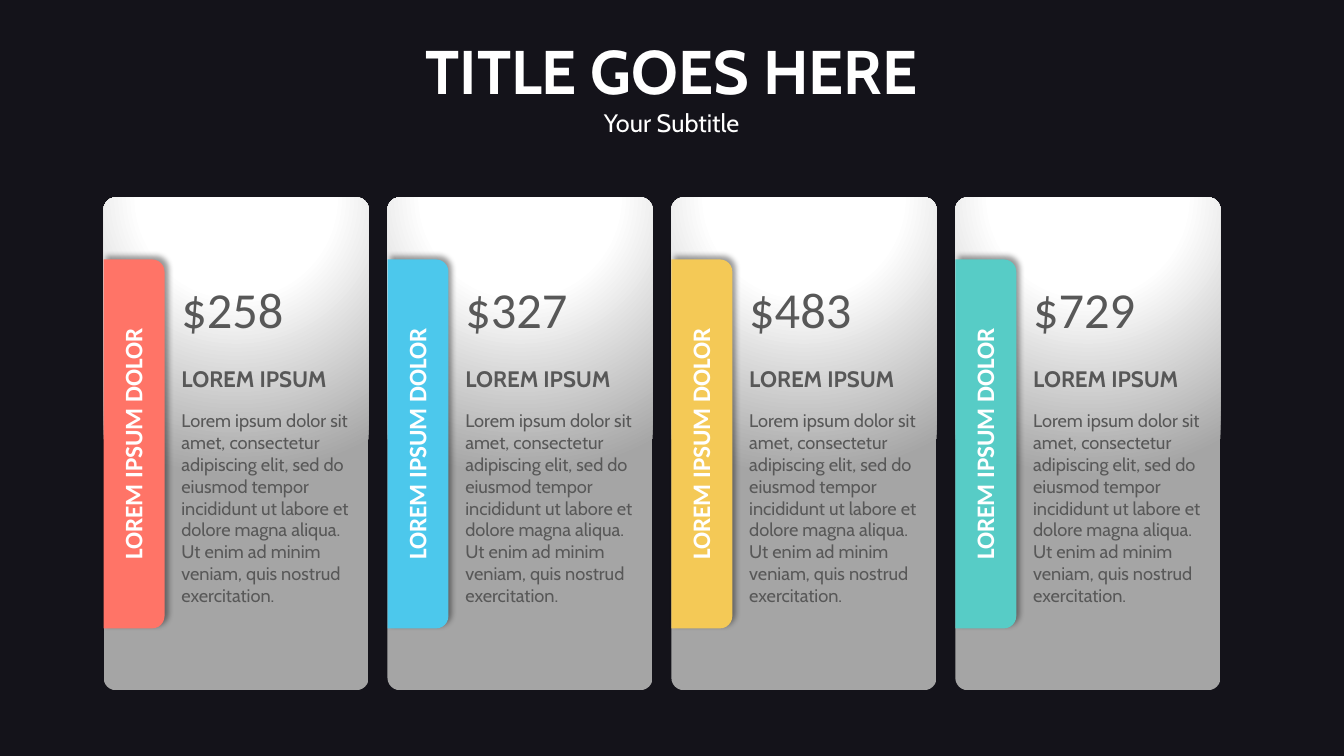
from lxml import etree
from pptx import Presentation
from pptx.dml.color import RGBColor
from pptx.enum import shapes, text
from pptx.oxml import parse_xml
from pptx.oxml.ns import nsdecls
from pptx.util import Pt

NIGHT = RGBColor(0x14, 0x13, 0x1A)
WHITE = RGBColor(0xFF, 0xFF, 0xFF)
GREY = RGBColor(0x58, 0x58, 0x58)
SILVER = RGBColor(0xA5, 0xA5, 0xA5)
BLACK = RGBColor(0, 0, 0)
CORAL = RGBColor(0xFF, 0x74, 0x67)
SKY = RGBColor(0x4C, 0xC8, 0xEC)
AMBER = RGBColor(0xF4, 0xC9, 0x56)
TEAL = RGBColor(0x57, 0xCC, 0xC6)

PLANS = [("$258", CORAL), ("$327", SKY), ("$483", AMBER), ("$729", TEAL)]
TAB_LABEL = "LOREM IPSUM DOLOR"
HEADING = "LOREM IPSUM"
BODY = ("Lorem ipsum dolor sit amet, consectetur adipiscing elit, sed do "
        "eiusmod tempor incididunt ut labore et dolore magna aliqua. "
        "Ut enim ad minim veniam, quis nostrud exercitation.")
RADIUS = 8.8


def add_text(p, words, font, size, color, bold=False, align=None, before=0):
    p.alignment = align
    p.space_before = Pt(before)
    r = p.add_run()
    r.text = words
    r.font.name = font
    r.font.size = Pt(size)
    r.font.bold = bold
    r.font.color.rgb = color


def add_plain_shape(s, kind, x, y, w, h):
    sp = s.shapes.add_shape(kind, Pt(x), Pt(y), Pt(w), Pt(h))
    sp.shadow.inherit = False
    sp.line.fill.background()
    return sp


def set_glow_fill(sp):
    """Fill with a radial gradient centred above the shape."""
    sp.fill.background()
    stops = "".join(
        f'<a:gs pos="{pos * 1000}"><a:srgbClr val="{color}"/></a:gs>'
        for pos, color in ((0, WHITE), (35, WHITE), (100, SILVER)))
    grad = parse_xml(
        f'<a:gradFill {nsdecls("a")} rotWithShape="1"><a:gsLst>{stops}</a:gsLst>'
        '<a:path path="circle"><a:fillToRect l="50000" t="-80000" r="50000" '
        'b="180000"/></a:path></a:gradFill>')
    pr = sp._element.spPr
    pr.replace(pr.find("{*}noFill"), grad)


def set_shadow(sp):
    effects = sp._element.spPr.find("{*}effectLst")
    effects.append(etree.fromstring(
        f'<a:outerShdw {nsdecls("a")} blurRad="{Pt(4)}" dist="{Pt(3)}" '
        'dir="18900000" algn="bl" rotWithShape="0">'
        f'<a:srgbClr val="{BLACK}"><a:alpha val="40000"/></a:srgbClr>'
        '</a:outerShdw>'))


def add_header(s, x, y, w, h):
    sp = s.shapes.title
    sp.left, sp.top, sp.width, sp.height = Pt(x), Pt(y), Pt(w), Pt(h)
    tf = sp.text_frame
    tf.word_wrap = True
    tf.auto_size = text.MSO_AUTO_SIZE.NONE
    tf.vertical_anchor = text.MSO_ANCHOR.TOP
    center = text.PP_ALIGN.CENTER
    add_text(tf.paragraphs[0], "TITLE GOES HERE", "Cabin", 44, WHITE, True, center)
    add_text(tf.add_paragraph(), "Your Subtitle", "Cabin", 18, WHITE, False, center)


def add_tab(s, x, y, w, h, color):
    """Place a vertical tab; it is drawn lying down and turned to fit the box."""
    sp = add_plain_shape(s, shapes.MSO_SHAPE.ROUND_2_SAME_RECTANGLE,
                         x + (w - h) / 2, y + (h - w) / 2, h, w)
    sp.adjustments[0] = 0
    sp.adjustments[1] = RADIUS / w
    sp.rotation = 270
    sp.fill.solid()
    sp.fill.fore_color.rgb = color
    set_shadow(sp)
    tf = sp.text_frame
    tf.word_wrap = True
    tf.vertical_anchor = text.MSO_ANCHOR.MIDDLE
    add_text(tf.paragraphs[0], TAB_LABEL, "Calibri", 18, WHITE, True,
             text.PP_ALIGN.CENTER)


def add_card(s, x, y, w, h, price, color):
    card = add_plain_shape(s, shapes.MSO_SHAPE.ROUNDED_RECTANGLE, x, y, w, h)
    card.adjustments[0] = RADIUS / w
    set_glow_fill(card)
    add_tab(s, x, y + 44.3, 43.5, 263.5, color)

    box = s.shapes.add_textbox(Pt(x + 48.5), Pt(y + 53.8), Pt(w - 48.5), Pt(243.4))
    tf = box.text_frame
    tf.word_wrap = True
    add_text(tf.paragraphs[0], price, "Calibri", 36, GREY)
    add_text(tf.add_paragraph(), HEADING, "Cabin", 16, GREY, True, before=19.5)
    add_text(tf.add_paragraph(), BODY, "Cabin", 13, GREY, before=12.2)


def main():
    prs = Presentation()
    prs.slide_width, prs.slide_height = Pt(960), Pt(540)
    s = prs.slides.add_slide(prs.slide_layouts[5])
    s.background.fill.solid()
    s.background.fill.fore_color.rgb = NIGHT
    add_header(s, 263, 20.2, 433.5, 82)
    for i, (price, color) in enumerate(PLANS):
        add_card(s, 74 + 202.8 * i, 141, 189.4, 352, price, color)
    prs.save("out.pptx")


if __name__ == "__main__":
    main()
